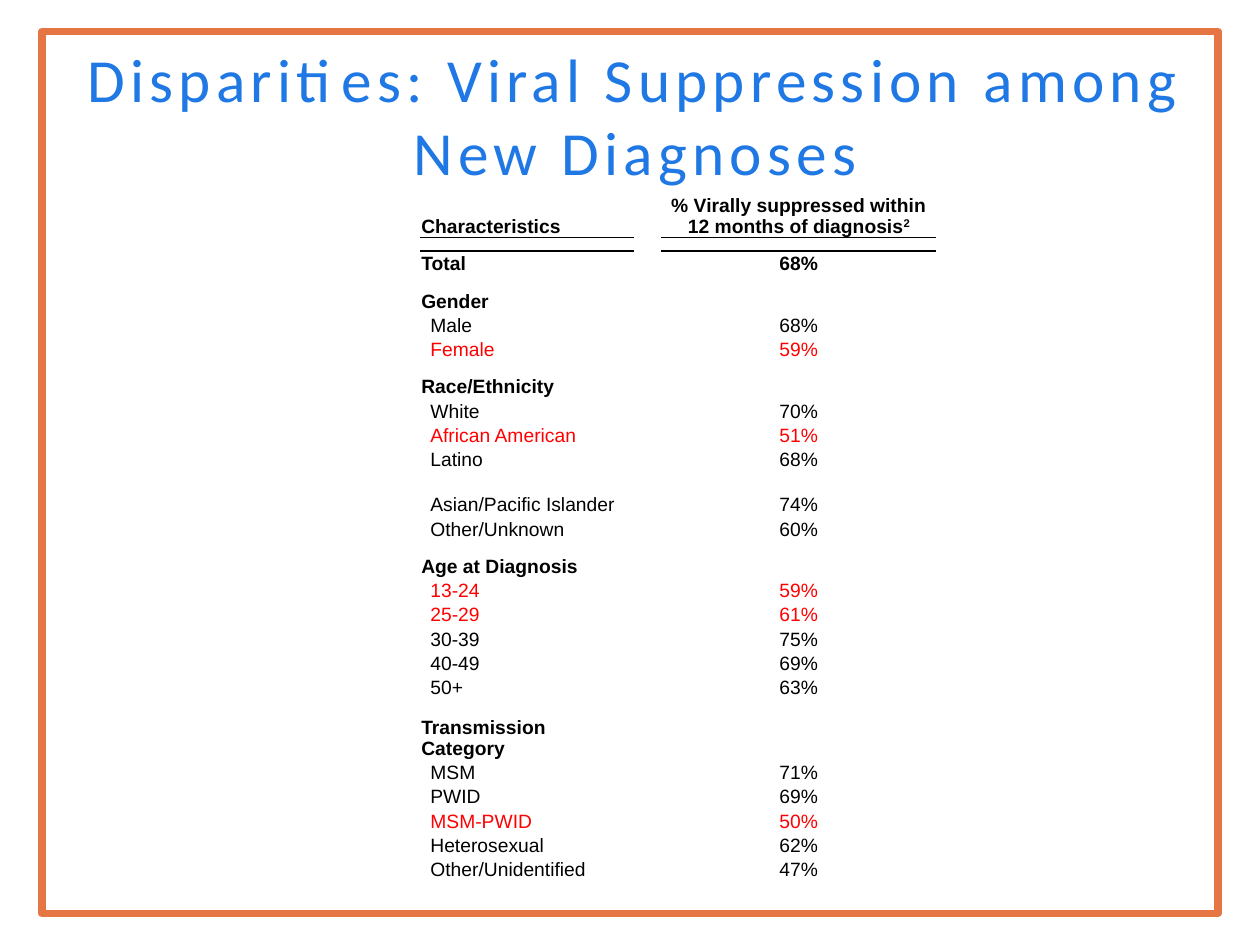
import lxml.etree
import pptx
import pptx.dml.color
import pptx.enum.shapes
import pptx.enum.text
import pptx.oxml.ns
import pptx.util

Pt = pptx.util.Pt
ALIGN = pptx.enum.text.PP_ALIGN
ANCHOR = pptx.enum.text.MSO_ANCHOR
qn = pptx.oxml.ns.qn

BLACK, RED, BLUE, ORANGE = "000000", "FF0000", "1F78E3", "E57543"
NO_STYLE = "{2D5ABB26-0587-4C30-8999-92F81FD0307C}"

HEADER_HEIGHT, GAP_HEIGHT, ROW_HEIGHT = 50.4, 7.5, 13.85
TALL_HEIGHTS = {"Asian/Pacific Islander": 25.9, "Transmission Category": 27.4}
COLUMN_WIDTHS = [122.4, 5.2, 5.2, 5.2, 157]
LABEL, VALUE = 0, 4

GROUPS = [
    ("Total", "68%", []),
    ("Gender", "", [("Male", "68%"), ("Female", "59%")]),
    ("Race/Ethnicity", "", [
        ("White", "70%"), ("African American", "51%"), ("Latino", "68%"),
        ("Asian/Pacific Islander", "74%"), ("Other/Unknown", "60%")]),
    ("Age at Diagnosis", "", [
        ("13-24", "59%"), ("25-29", "61%"), ("30-39", "75%"),
        ("40-49", "69%"), ("50+", "63%")]),
    ("Transmission Category", "", [
        ("MSM", "71%"), ("PWID", "69%"), ("MSM-PWID", "50%"),
        ("Heterosexual", "62%"), ("Other/Unidentified", "47%")]),
]
HIGHLIGHTED = {"Female", "African American", "13-24", "25-29", "MSM-PWID"}


def color(value):
    return pptx.dml.color.RGBColor.from_string(value)


class SlideBuilder:
    title_font = "Calibri"
    table_font = "Arial"
    table_size = 11

    def __init__(self, page):
        self.page = page

    def frame(self, left, top, width, height):
        box = self.page.shapes.add_shape(
            pptx.enum.shapes.MSO_SHAPE.RECTANGLE,
            Pt(left), Pt(top), Pt(width), Pt(height))
        box.shadow.inherit = False
        box.fill.background()
        box.line.color.rgb = color(ORANGE)
        box.line.width = Pt(4.25)

    def title(self, text, left, top, width, height):
        box = self.page.shapes.title
        box.left, box.top, box.width, box.height = map(Pt, (left, top, width, height))
        frame = box.text_frame
        frame.text = text
        frame.word_wrap = True
        frame.auto_size = pptx.enum.text.MSO_AUTO_SIZE.NONE
        frame.vertical_anchor = ANCHOR.MIDDLE
        frame.paragraphs[0].alignment = ALIGN.CENTER
        span = frame.paragraphs[0].runs[0]
        span.font.name = self.title_font
        span.font.size = Pt(35)
        span.font.color.rgb = color(BLUE)
        span._r.get_or_add_rPr().set("spc", "300")

    def table(self, left, top, widths, heights):
        """Add a plain table whose cells are all empty and unfilled."""
        shape = self.page.shapes.add_table(
            len(heights), len(widths), Pt(left), Pt(top),
            Pt(sum(widths)), Pt(sum(heights)))
        table = shape.table
        table.first_row = table.horz_banding = False
        table._tbl.tblPr.find(qn("a:tableStyleId")).text = NO_STYLE
        for column, width in zip(table.columns, widths):
            column.width = Pt(width)
        for row, height in zip(table.rows, heights):
            row.height = Pt(height)
        for cell in table.iter_cells():
            cell.fill.background()
            cell.margin_left = cell.margin_right = cell.margin_top = Pt(0.72)
            cell.margin_bottom = 0
            cell.vertical_anchor = ANCHOR.BOTTOM
            # A small end mark keeps empty cells from stretching the gap rows
            end = lxml.etree.SubElement(
                cell.text_frame.paragraphs[0]._p, qn("a:endParaRPr"))
            end.set("sz", "400")
        return table

    def cell_text(self, cell, text, bold=False, ink=BLACK, centered=False, indent=0.72):
        cell.text_frame.text = text
        cell.margin_left = Pt(indent)
        para = cell.text_frame.paragraphs[0]
        para.alignment = ALIGN.CENTER if centered else ALIGN.LEFT
        self.format_span(para.runs[0], bold, ink)
        return para

    def format_span(self, span, bold, ink):
        span.font.name = self.table_font
        span.font.size = Pt(self.table_size)
        span.font.bold = bold
        span.font.color.rgb = color(ink)

    def superscript(self, para, text):
        span = para.add_run()
        span.text = text
        self.format_span(span, True, BLACK)
        span._r.get_or_add_rPr().set("baseline", "30000")

    def border(self, cell, side):
        """Draw a 1 pt black line on one side: lnT or lnB."""
        line = lxml.etree.Element(qn("a:" + side), w=str(Pt(1)))
        fill = lxml.etree.SubElement(line, qn("a:solidFill"))
        lxml.etree.SubElement(fill, qn("a:srgbClr"), val=BLACK)
        cell._tc.get_or_add_tcPr().insert(0, line)


def table_rows():
    """List (label, value, is_heading) below the header; None is a gap."""
    rows = []
    for heading, total, members in GROUPS:
        rows += [None, (heading, total, True)]
        rows += [(label, value, False) for label, value in members]
    return rows


def row_height(row):
    return TALL_HEIGHTS.get(row[0], ROW_HEIGHT) if row else GAP_HEIGHT


def main():
    deck = pptx.Presentation()
    deck.slide_width, deck.slide_height = Pt(720), Pt(540)
    builder = SlideBuilder(deck.slides.add_slide(deck.slide_layouts[5]))

    builder.frame(24, 18, 672, 504)
    builder.title("Disparities: Viral Suppression among New Diagnoses", 36, 30, 654, 71)

    rows = table_rows()
    heights = [HEADER_HEIGHT] + [row_height(row) for row in rows]
    table = builder.table(240, 85.4, COLUMN_WIDTHS, heights)

    builder.cell_text(table.cell(0, LABEL), "Characteristics", bold=True)
    para = builder.cell_text(
        table.cell(0, VALUE), "% Virally suppressed within 12 months of diagnosis",
        bold=True, centered=True)
    builder.superscript(para, "2")
    for column in (LABEL, VALUE):
        builder.border(table.cell(0, column), "lnB")
        builder.border(table.cell(1, column), "lnT")

    for index, row in enumerate(rows, start=1):
        if row is None:
            continue
        label, value, is_heading = row
        ink = RED if label in HIGHLIGHTED else BLACK
        builder.cell_text(table.cell(index, LABEL), label, is_heading, ink,
                          indent=0.72 if is_heading else 5.9)
        if value:
            builder.cell_text(table.cell(index, VALUE), value, is_heading, ink, centered=True)

    deck.save("out.pptx")


if __name__ == "__main__":
    main()
